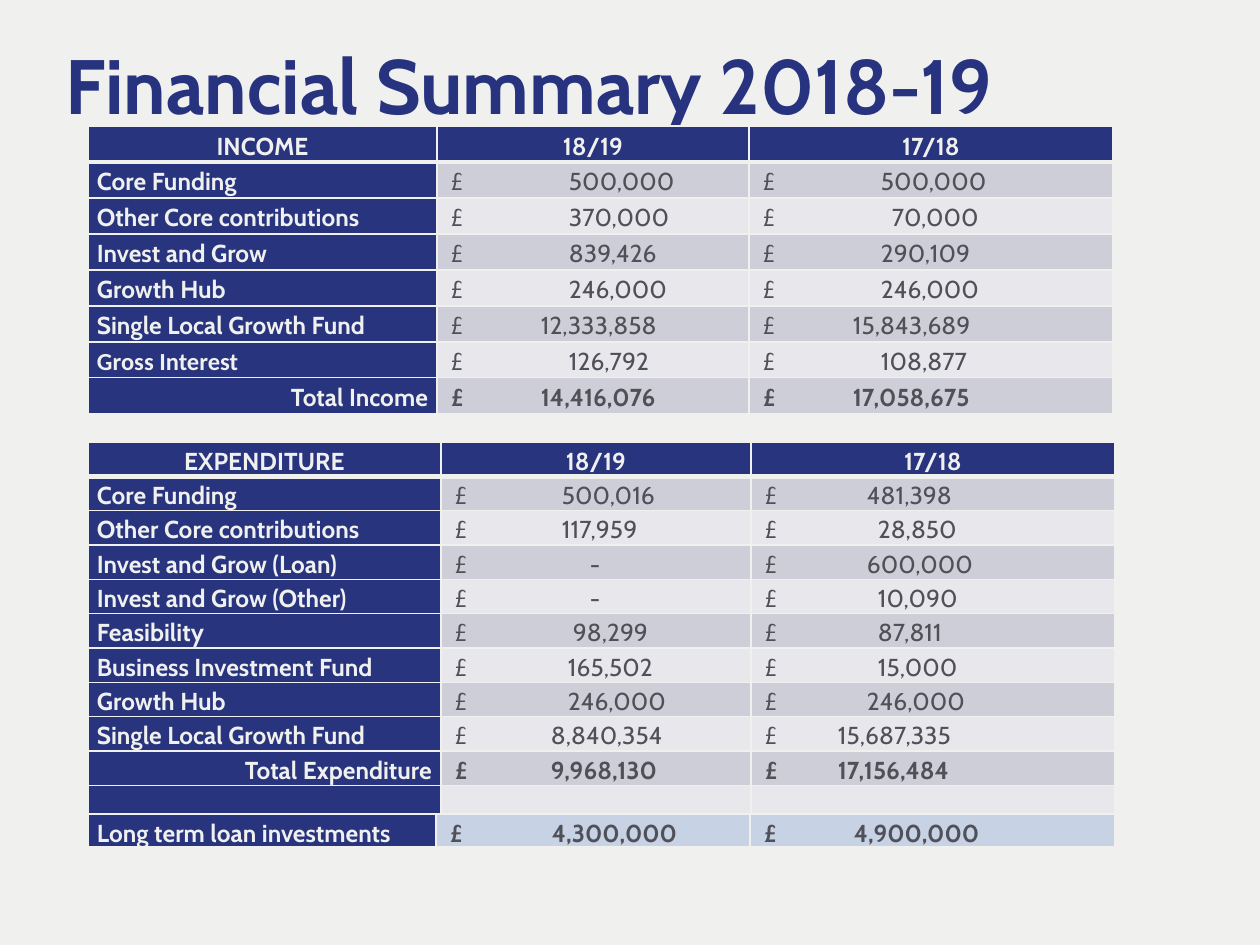
from lxml import etree
from pptx import Presentation
from pptx.dml.color import RGBColor
from pptx.enum.text import MSO_ANCHOR, PP_ALIGN
from pptx.oxml.ns import qn
from pptx.util import Pt

LEFT, MID, RIGHT = PP_ALIGN.LEFT, PP_ALIGN.CENTER, PP_ALIGN.RIGHT
TOP, CENTRE = MSO_ANCHOR.TOP, MSO_ANCHOR.MIDDLE
PAPER = RGBColor(0xF0, 0xF0, 0xEF)
INK = RGBColor(0x27, 0x33, 0x7E)
NAVY = RGBColor(0x28, 0x34, 0x7E)
GREY = RGBColor(0x50, 0x50, 0x59)
DARK = RGBColor(0xCD, 0xCE, 0xD8)
LIGHT = RGBColor(0xE8, 0xE8, 0xEC)
BLUE = RGBColor(0xC7, 0xD2, 0xE5)
FONT, PLAIN = "Cabin", "Calibri"
PX = 914400 // 126
SIDE, INDENT = 9, 14

TITLE = "Financial Summary 2018-19"
YEARS = ["18/19", "17/18"]

# Each amount is paired with the px from the cell's left edge to its first digit.
INCOME = [
    ("Core Funding", ("500,000", 132), ("500,000", 132)),
    ("Other Core contributions", ("370,000", 132), ("70,000", 143)),
    ("Invest and Grow", ("839,426", 132), ("290,109", 132)),
    ("Growth Hub", ("246,000", 132), ("246,000", 132)),
    ("Single Local Growth Fund", ("12,333,858", 104), ("15,843,689", 104)),
    ("Gross Interest", ("126,792", 132), ("108,877", 132)),
    ("Total Income", ("14,416,076", 104), ("17,058,675", 104)),
]
SPEND = [
    ("Core Funding", ("500,016", 121), ("481,398", 116)),
    ("Other Core contributions", ("117,959", 121), ("28,850", 127)),
    ("Invest and Grow (Loan)", ("-", 149), ("600,000", 116)),
    ("Invest and Grow (Other)", ("-", 149), ("10,090", 127)),
    ("Feasibility", ("98,299", 132), ("87,811", 127)),
    ("Business Investment Fund", ("165,502", 127), ("15,000", 127)),
    ("Growth Hub", ("246,000", 127), ("246,000", 116)),
    ("Single Local Growth Fund", ("8,840,354", 110), ("15,687,335", 87)),
    ("Total Expenditure", ("9,968,130", 110), ("17,156,484", 87)),
    ("", None, None),
]
LOANS = [("Long term loan investments", ("4,300,000", 116), ("4,900,000", 104))]

TABLES = [
    ("INCOME", INCOME, 126, [349, 312, 364], [36] * 8, [DARK, LIGHT]),
    ("EXPENDITURE", SPEND, 442, [353, 310, 364], [34] * 10 + [28], [DARK, LIGHT]),
    (None, LOANS, 814, [348, 314, 365], [34], [BLUE]),
]


def edge(cell, base):
    props = cell._tc.get_or_add_tcPr()
    for tag, width in (("a:lnL", 1), ("a:lnR", 1), ("a:lnT", 1), ("a:lnB", base)):
        line = etree.SubElement(props, qn(tag), w=str(Pt(width)))
        fill = etree.SubElement(line, qn("a:solidFill"))
        etree.SubElement(fill, qn("a:srgbClr"), val=str(PAPER))


def style(cell, text, fill, ink, bold, align=LEFT, base=1, start=None):
    edge(cell, base)
    cell.fill.solid()
    cell.fill.fore_color.rgb = fill
    cell.vertical_anchor = CENTRE
    inset = INDENT if start else SIDE
    cell.margin_left, cell.margin_right = inset * PX, SIDE * PX
    cell.margin_top = cell.margin_bottom = 0
    para = cell.text_frame.paragraphs[0]
    para.text = text
    para.alignment = align
    para.line_spacing = 1.15
    if start:
        tabs = etree.SubElement(para._p.get_or_add_pPr(), qn("a:tabLst"))
        stop = str((start - inset) * PX)
        etree.SubElement(tabs, qn("a:tab"), pos=stop, algn="l")
    if not text:
        etree.SubElement(para._p, qn("a:endParaRPr"), sz="1200")
    for run in para.runs:
        run.font.name = PLAIN if text == "Gross Interest" else FONT
        run.font.size = Pt(14)
        run.font.bold = bold
        run.font.color.rgb = ink


def draw(slide, head, rows, top, cols, highs, bands):
    frame = slide.shapes.add_table(len(highs), 3, 88 * PX, top * PX,
                                   sum(cols) * PX, sum(highs) * PX)
    table = frame.table
    for col, width in zip(table.columns, cols):
        col.width = width * PX
    for row, high in zip(table.rows, highs):
        row.height = high * PX
    if head:
        for i, text in enumerate([head] + YEARS):
            style(table.cell(0, i), text, NAVY, PAPER, True, MID, 3)
    first = 1 if head else 0
    base = 1 if head else 3
    for i, (label, *sums) in enumerate(rows):
        total = label.startswith("Total")
        style(table.cell(i + first, 0), label, NAVY, PAPER, True,
              RIGHT if total else LEFT, base)
        for j, item in enumerate(sums, 1):
            text, start = (f"£\t{item[0]}", item[1]) if item else ("", None)
            style(table.cell(i + first, j), text, bands[i % len(bands)], GREY,
                  total or not head, base=base, start=start)


def main():
    deck = Presentation()
    deck.slide_width, deck.slide_height = 1260 * PX, 945 * PX
    slide = deck.slides.add_slide(deck.slide_layouts[5])
    slide.background.fill.solid()
    slide.background.fill.fore_color.rgb = PAPER
    title = slide.shapes.title
    title.left, title.top, title.width, title.height = (
        n * PX for n in (53, 42, 1157, 180))
    title.text_frame.text = TITLE
    title.text_frame.vertical_anchor = TOP
    para = title.text_frame.paragraphs[0]
    para.alignment = LEFT
    para.line_spacing = 0.9
    font = para.runs[0].font
    font.name, font.size, font.bold = FONT, Pt(44), True
    font.color.rgb = INK
    for spec in TABLES:
        draw(slide, *spec)
    deck.save("out.pptx")


if __name__ == "__main__":
    main()
